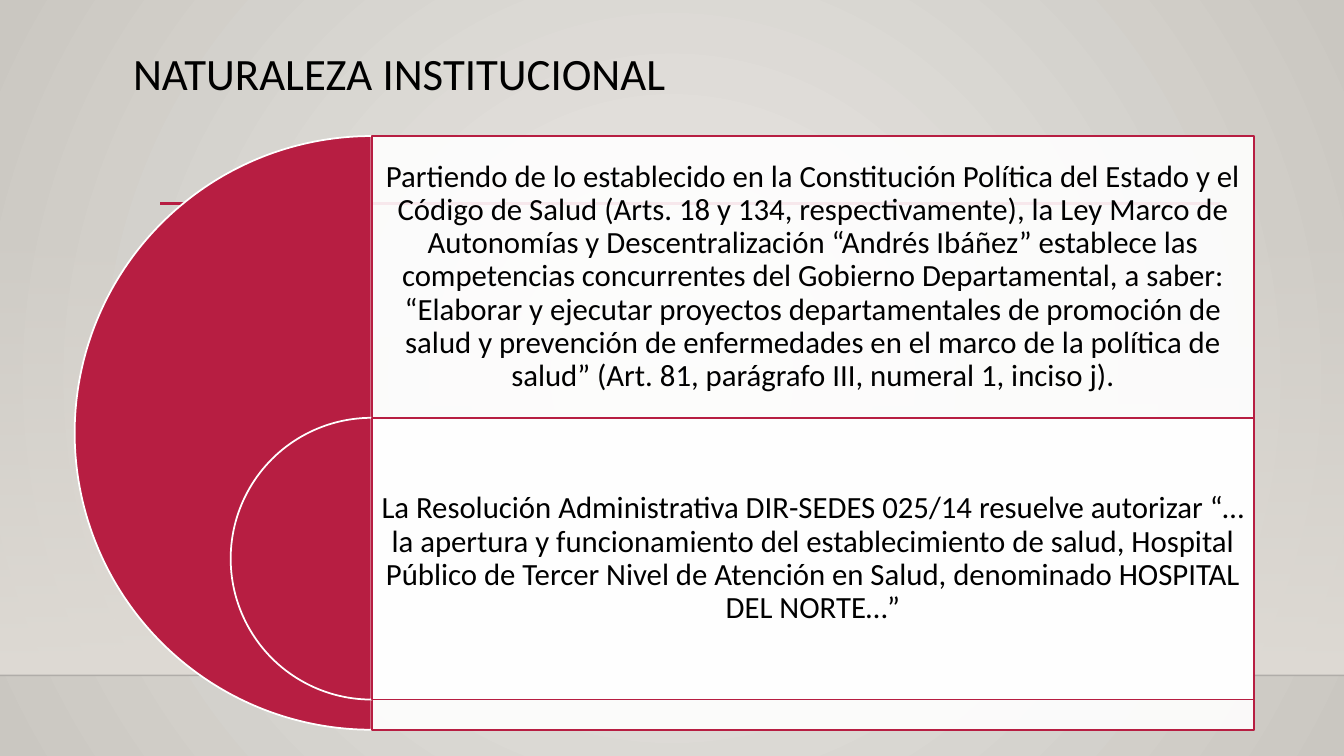
from lxml import etree
from pptx import Presentation
from pptx.dml.color import RGBColor
from pptx.enum.shapes import MSO_CONNECTOR, MSO_SHAPE
from pptx.enum.text import MSO_ANCHOR, MSO_AUTO_SIZE, PP_ALIGN
from pptx.oxml.ns import qn
from pptx.util import Inches, Pt

PIE, RECT = MSO_SHAPE.PIE, MSO_SHAPE.RECTANGLE
LINE = MSO_CONNECTOR.STRAIGHT
LEFT, CENTER = PP_ALIGN.LEFT, PP_ALIGN.CENTER
TOP, MIDDLE = MSO_ANCHOR.TOP, MSO_ANCHOR.MIDDLE
FIXED = MSO_AUTO_SIZE.NONE

RED = RGBColor(0xB7, 0x1E, 0x42)
WHITE = RGBColor(0xFF, 0xFF, 0xFF)
BLACK = RGBColor(0, 0, 0)
EDGE = RGBColor(0, 0, 1)
LIGHT = RGBColor(0xEC, 0xEA, 0xE7)
DARK = RGBColor(0xCA, 0xC7, 0xC1)
WALL = RGBColor(0xDF, 0xDB, 0xD5)

WIDTH, HEIGHT = Inches(13.33), Inches(7.5)
FLOOR = 89.33
AXIS, RIGHT = 27.65, 93.32
START, STEP, FULL = 18, 37.27, 78.53

TITLE = "NATURALEZA INSTITUCIONAL"
ITEMS = [
    "Partiendo de lo establecido en la Constitución Política del Estado y el "
    "Código de Salud (Arts. 18 y 134, respectivamente), la Ley Marco de "
    "Autonomías y Descentralización “Andrés Ibáñez” establece las "
    "competencias concurrentes del Gobierno Departamental, a saber: "
    "“Elaborar y ejecutar proyectos departamentales de promoción de salud y "
    "prevención de enfermedades en el marco de la política de salud” "
    "(Art. 81, parágrafo III, numeral 1, inciso j).",
    "La Resolución Administrativa DIR-SEDES 025/14 resuelve autorizar "
    "“…la apertura y funcionamiento del establecimiento de salud, Hospital "
    "Público de Tercer Nivel de Atención en Salud, denominado HOSPITAL DEL "
    "NORTE…”",
]


def across(share):
    """Return a percentage of the slide's width."""
    return int(WIDTH * share / 100)


def down(share):
    """Return a percentage of the slide's height."""
    return int(HEIGHT * share / 100)


def fade(color, share):
    """Set the opacity of an RGB colour element."""
    etree.SubElement(color, qn("a:alpha"), val=str(share * 1000))


def blend(fill, first, last):
    """Make a fill run from one colour to another."""
    fill.gradient()
    for stop, color in zip(fill.gradient_stops, (first, last)):
        stop.color.rgb = color


def backdrop(slide):
    """Give the slide a radial background."""
    blend(slide.background.fill, LIGHT, DARK)
    grad = slide.background._cSld.find(".//" + qn("a:gradFill"))
    grad.remove(grad.find(qn("a:lin")))
    ring = etree.SubElement(grad, qn("a:path"))
    ring.set("path", "circle")
    etree.SubElement(ring, qn("a:fillToRect"), l="50000", t="50000",
                     r="50000", b="50000")


def block(slide, kind, box, color, edge, alpha=100):
    """Add a filled and outlined shape."""
    shape = slide.shapes.add_shape(kind, *box)
    shape.shadow.inherit = False
    shape.fill.solid()
    shape.fill.fore_color.rgb = color
    if alpha < 100:
        fade(shape._element.spPr.find(".//" + qn("a:srgbClr")), alpha)
    shape.line.color.rgb = edge
    shape.line.width = Pt(1.25)
    return shape


def wall(slide):
    """Add the fading band above the floor."""
    top = down(29.47)
    band = slide.shapes.add_shape(RECT, 0, top, WIDTH, down(FLOOR) - top)
    band.shadow.inherit = False
    band.line.fill.background()
    blend(band.fill, WALL, WALL)
    band.fill.gradient_angle = 270
    fade(band._element.spPr.find(".//" + qn("a:srgbClr")), 0)


def rule(slide, left, right, top, color, width, alpha=100):
    """Add a level line."""
    line = slide.shapes.add_connector(LINE, across(left), down(top),
                                      across(right), down(top))
    line.line.color.rgb = color
    line.line.width = Pt(width)
    props = line._element.spPr
    if alpha < 100:
        fade(props.find(".//" + qn("a:srgbClr")), alpha)
    etree.SubElement(props, qn("a:effectLst"))


def write(shape, text, size=22, align=CENTER, anchor=MIDDLE, inset=0.09):
    """Put formatted text in a shape."""
    frame = shape.text_frame
    frame.word_wrap = True
    frame.auto_size = FIXED
    frame.vertical_anchor = anchor
    frame.margin_left = frame.margin_right = Inches(inset)
    frame.margin_top = frame.margin_bottom = Inches(min(inset, 0.09))
    frame.text = text
    para = frame.paragraphs[0]
    para.alignment = align
    para.line_spacing = 0.9
    para.font.size = Pt(size)
    para.font.name = "Calibri"
    para.font.color.rgb = BLACK


def heading(slide):
    """Place and fill the title."""
    title = slide.shapes.title
    title.left, title.top = across(9.15), down(6.13)
    title.width, title.height = across(70.52), down(19.2)
    write(title, TITLE, size=32, align=LEFT, anchor=TOP, inset=0.1)
    title.text_frame.margin_top = Inches(0.05)


def layer(slide, index, text):
    """Add a half disc, its panel and its text."""
    top = down(START + index * STEP)
    size = down(STEP if index else FULL)
    left, wide = across(AXIS), across(RIGHT - AXIS)
    half = block(slide, PIE, (left - size // 2, top, size, size), RED, WHITE)
    half.adjustments[0], half.adjustments[1] = 54, 162
    block(slide, RECT, (left, top, wide, size), WHITE, RED, alpha=90)
    label = slide.shapes.add_textbox(left, top, wide, down(STEP))
    write(label, text)


def main():
    """Build and save the slide."""
    deck = Presentation()
    deck.slide_width, deck.slide_height = WIDTH, HEIGHT
    slide = deck.slides.add_slide(deck.slide_layouts[5])
    backdrop(slide)
    wall(slide)
    rule(slide, 0, 100, FLOOR, EDGE, 1, alpha=20)
    rule(slide, 11.93, 90.77, 26.93, RED, 2.5)
    heading(slide)
    for index, text in enumerate(ITEMS):
        layer(slide, index, text)
    deck.save("out.pptx")


if __name__ == "__main__":
    main()
